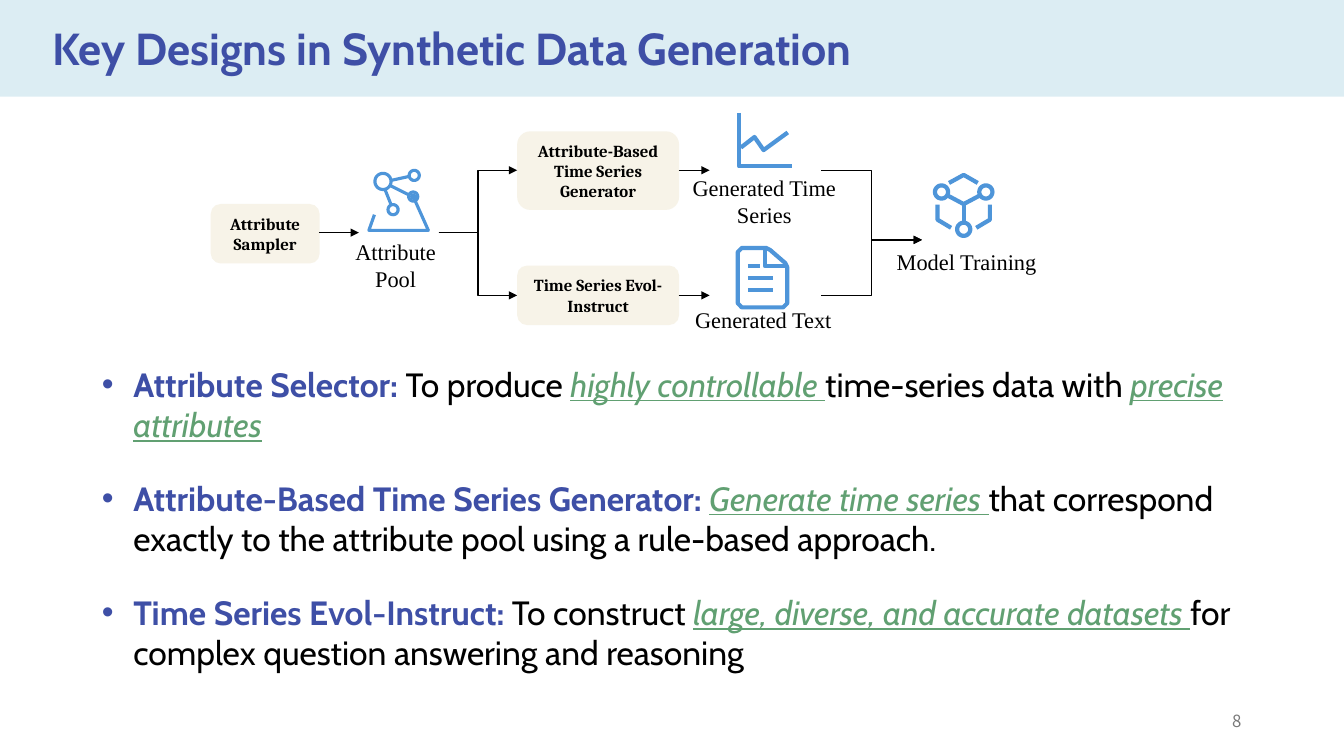
import math
from typing import NamedTuple

import lxml.etree
import pptx
import pptx.dml.color
import pptx.enum.shapes
import pptx.enum.text
import pptx.oxml.ns
import pptx.util

Align = pptx.enum.text.PP_ALIGN
Anchor = pptx.enum.text.MSO_ANCHOR
Preset = pptx.enum.shapes.MSO_SHAPE
Route = pptx.enum.shapes.MSO_CONNECTOR
Point = tuple[float, float]
Stroke = tuple[Point, ...]


class Type(NamedTuple):
    face: str
    size: int
    color: str = "000000"
    bold: bool = False


class Theme(NamedTuple):
    band: str = "DCEDF3"
    indigo: str = "3E4FA6"
    green: str = "61A072"
    black: str = "000000"
    cream: str = "F7F3E8"
    icon: str = "4E95D9"
    title: Type = Type("Cabin", 32, "3E4FA6", True)
    body: Type = Type("Cabin", 24)
    stage: Type = Type("Cambria", 12, bold=True)
    label: Type = Type("Times New Roman", 16)
    page: Type = Type("Noto Sans CJK SC", 12, "797979")


class Area(NamedTuple):
    left: float
    top: float
    width: float
    height: float


class Caption(NamedTuple):
    text: str
    area: Area


class Flow(NamedTuple):
    start: Point
    end: Point


class Icon(NamedTuple):
    left: float
    top: float
    weight: float
    strokes: tuple[Stroke, ...]


class Passage(NamedTuple):
    text: str
    role: str = "plain"


def ring(x: float, y: float, radius: float) -> Stroke:
    turns = [math.radians(10 * step) for step in range(37)]
    return tuple((x + radius * math.cos(t), y + radius * math.sin(t)) for t in turns)


THEME = Theme()
SLIDE_WIDTH, SLIDE_HEIGHT = pptx.util.Inches(13.33), pptx.util.Inches(7.5)
ICON_CELL = 0.075
UPPER, MIDDLE, LOWER, MERGED = 22.53, 30.77, 39.07, 31.73
STAGES = (
    Caption("Attribute Sampler", Area(15.68, 26.98, 8.1, 7.87)),
    Caption("Attribute-Based Time Series Generator", Area(38.48, 17.37, 12.05, 10.4)),
    Caption("Time Series Evol-Instruct", Area(38.48, 35.13, 12.05, 7.87)),
)
LABELS = (
    Caption("Attribute Pool", Area(24.9, 30.8, 9.08, 8.53)),
    Caption("Generated Time Series", Area(50.57, 22.4, 12.6, 8.53)),
    Caption("Generated Text", Area(50.5, 39.87, 12.6, 4.93)),
    Caption("Model Training", Area(65.62, 32.2, 12.6, 4.93)),
)
FLOWS = (Flow((23.73, MIDDLE), (26.7, MIDDLE)),) + tuple(
    flow for row in (UPPER, LOWER) for flow in (
        Flow((32.63, MIDDLE), (38.48, row)),
        Flow((50.5, row), (52.8, row)),
        Flow((61.1, row), (68.6, MERGED)),
    )
)
ICONS = (
    Icon(27.3, 22.4, 2.25, (
        ((7.5, 45), (2, 60.5), (61, 60.5), (46, 27)),
        ((24, 11), (42, 7)), ((23, 16), (41, 25)), ((18, 20), (24, 35)),
        ring(16, 12, 8), ring(47, 6, 5), ring(26, 40, 5), ring(46, 27, 4.5), ring(46, 27, 1.5))),
    Icon(54.83, 14.93, 3, (
        ((2, 0), (2, 53), (55, 53)), ((4, 34.5), (17.5, 24), (26.5, 37), (50.5, 19.5)))),
    Icon(54.75, 32.53, 3, (
        ((6, 2), (30, 2), (34, 4), (49, 17), (51, 21), (51, 57),
         (47, 61), (6, 61), (2, 57), (2, 6), (6, 2)),)),
    Icon(54.75, 32.53, 3, (
        ((29, 2), (29, 20), (49, 20)),
        ((12, 20), (24, 20)), ((12, 32), (37, 32)), ((12, 44), (37, 44)))),
    Icon(69.38, 22.8, 3, (
        ((15, 23), (31, 31.5), (47, 23)), ((31, 31.5), (31, 50)),
        ring(9, 19.5, 6.5), ring(53, 19.5, 6.5), ring(31, 56.5, 6.5))),
    Icon(69.38, 22.8, 3, (
        ((16.5, 10.5), (31, 2.5), (45, 10.5)),
        ((5, 32), (5, 47), (18.5, 55)), ((57, 32), (57, 47), (43.5, 55)))),
)
DESIGNS = (
    (Passage("Attribute Selector: ", "lead"), Passage("To produce "),
     Passage("highly controllable ", "key"), Passage("time-series data with "),
     Passage("precise attributes", "key")),
    (Passage("Attribute-Based Time Series Generator: ", "lead"),
     Passage("Generate time series ", "key"),
     Passage("that correspond exactly to the attribute pool using a rule-based approach.")),
    (Passage("Time Series Evol-Instruct: ", "lead"), Passage("To construct "),
     Passage("large, diverse, and accurate datasets ", "key"),
     Passage("for complex question answering and reasoning")),
)


def across(share: float) -> int:
    return round(SLIDE_WIDTH * share / 100)


def down(share: float) -> int:
    return round(SLIDE_HEIGHT * share / 100)


def box(area: Area) -> tuple[int, int, int, int]:
    return across(area.left), down(area.top), across(area.width), down(area.height)


def rgb(color: str) -> pptx.dml.color.RGBColor:
    return pptx.dml.color.RGBColor.from_string(color)


def write(frame, passages: tuple[Passage, ...], style: Type, align: Align, paragraph=None):
    paragraph = paragraph or frame.paragraphs[0]
    frame.word_wrap, paragraph.alignment = True, align
    for passage in passages:
        paragraph.add_run().text = passage.text
    for font in (paragraph.font, *(run.font for run in paragraph.runs)):
        font.name, font.size, font.bold = style.face, pptx.util.Pt(style.size), style.bold
        font.color.rgb = rgb(style.color)
    for run, passage in zip(paragraph.runs, passages):
        if passage.role == "lead":
            run.font.bold, run.font.color.rgb = True, rgb(THEME.indigo)
        elif passage.role == "key":
            run.font.italic = run.font.underline = True
            run.font.color.rgb = rgb(THEME.green)
    return paragraph


def place(holder, area: Area) -> None:
    holder.left, holder.top, holder.width, holder.height = box(area)
    holder.text_frame.auto_size = pptx.enum.text.MSO_AUTO_SIZE.NONE


def add_plate(slide, preset: Preset, area: Area, color: str):
    plate = slide.shapes.add_shape(preset, *box(area))
    plate.shadow.inherit = False
    plate.fill.solid()
    plate.fill.fore_color.rgb = rgb(color)
    plate.line.fill.background()
    return plate


def add_flow(slide, flow: Flow) -> None:
    route = Route.STRAIGHT if flow.start[1] == flow.end[1] else Route.ELBOW
    arrow = slide.shapes.add_connector(
        route, across(flow.start[0]), down(flow.start[1]), across(flow.end[0]), down(flow.end[1]))
    arrow.line.color.rgb, arrow.line.width = rgb(THEME.black), pptx.util.Pt(1)
    properties, qn = arrow.element.spPr, pptx.oxml.ns.qn
    lxml.etree.SubElement(properties.find(qn("a:ln")), qn("a:tailEnd"), type="triangle")
    lxml.etree.SubElement(properties, qn("a:effectLst"))


def add_icon(slide, icon: Icon) -> None:
    strokes = [[(across(icon.left + x * ICON_CELL), down(icon.top) + across(y * ICON_CELL))
                for x, y in stroke] for stroke in icon.strokes]
    outline = slide.shapes.build_freeform(*strokes[0][0])
    for stroke in strokes:
        if stroke is not strokes[0]:
            outline.move_to(*stroke[0])
        outline.add_line_segments(stroke[1:], close=stroke[0] == stroke[-1])
    drawing = outline.convert_to_shape()
    drawing.shadow.inherit = False
    drawing.fill.background()
    drawing.line.color.rgb, drawing.line.width = rgb(THEME.icon), pptx.util.Pt(icon.weight)


def add_text(slide, caption: Caption, style: Type, align: Align, anchor: Anchor) -> None:
    frame = slide.shapes.add_textbox(*box(caption.area)).text_frame
    frame.vertical_anchor = anchor
    write(frame, (Passage(caption.text),), style, align)


deck = pptx.Presentation()
deck.slide_width, deck.slide_height = SLIDE_WIDTH, SLIDE_HEIGHT
slide = deck.slides.add_slide(deck.slide_layouts[1])
title, designs = slide.placeholders
band = add_plate(slide, Preset.RECTANGLE, Area(0, 0, 100, 12.8), THEME.band)
title.element.addprevious(band.element)
place(title, Area(3.15, 2.05, 63.6, 8.53))
heading = (Passage("Key Designs in Synthetic Data Generation"),)
write(title.text_frame, heading, THEME.title, Align.LEFT)
title.text_frame.word_wrap = False
place(designs, Area(6.83, 47.4, 86.35, 42.67))
for index, design in enumerate(DESIGNS):
    listing = designs.text_frame
    bullet = listing.add_paragraph() if index else listing.paragraphs[0]
    write(listing, design, THEME.body, Align.LEFT, bullet).space_before = pptx.util.Pt(24)
    bullet._p.pPr.set("marL", str(across(2.34)))
    bullet._p.pPr.set("indent", str(-across(2.34)))
for stage in STAGES:
    plate = add_plate(slide, Preset.ROUNDED_RECTANGLE, stage.area, THEME.cream).text_frame
    plate.margin_left = plate.margin_right = across(0.15)
    plate.vertical_anchor = Anchor.MIDDLE
    write(plate, (Passage(stage.text),), THEME.stage, Align.CENTER)
for label in LABELS:
    add_text(slide, label, THEME.label, Align.CENTER, Anchor.TOP)
for icon in ICONS:
    add_icon(slide, icon)
for flow in FLOWS:
    add_flow(slide, flow)
page_number = Caption("8", Area(70.6, 92.67, 22.5, 5.33))
add_text(slide, page_number, THEME.page, Align.RIGHT, Anchor.MIDDLE)
deck.save("out.pptx")
